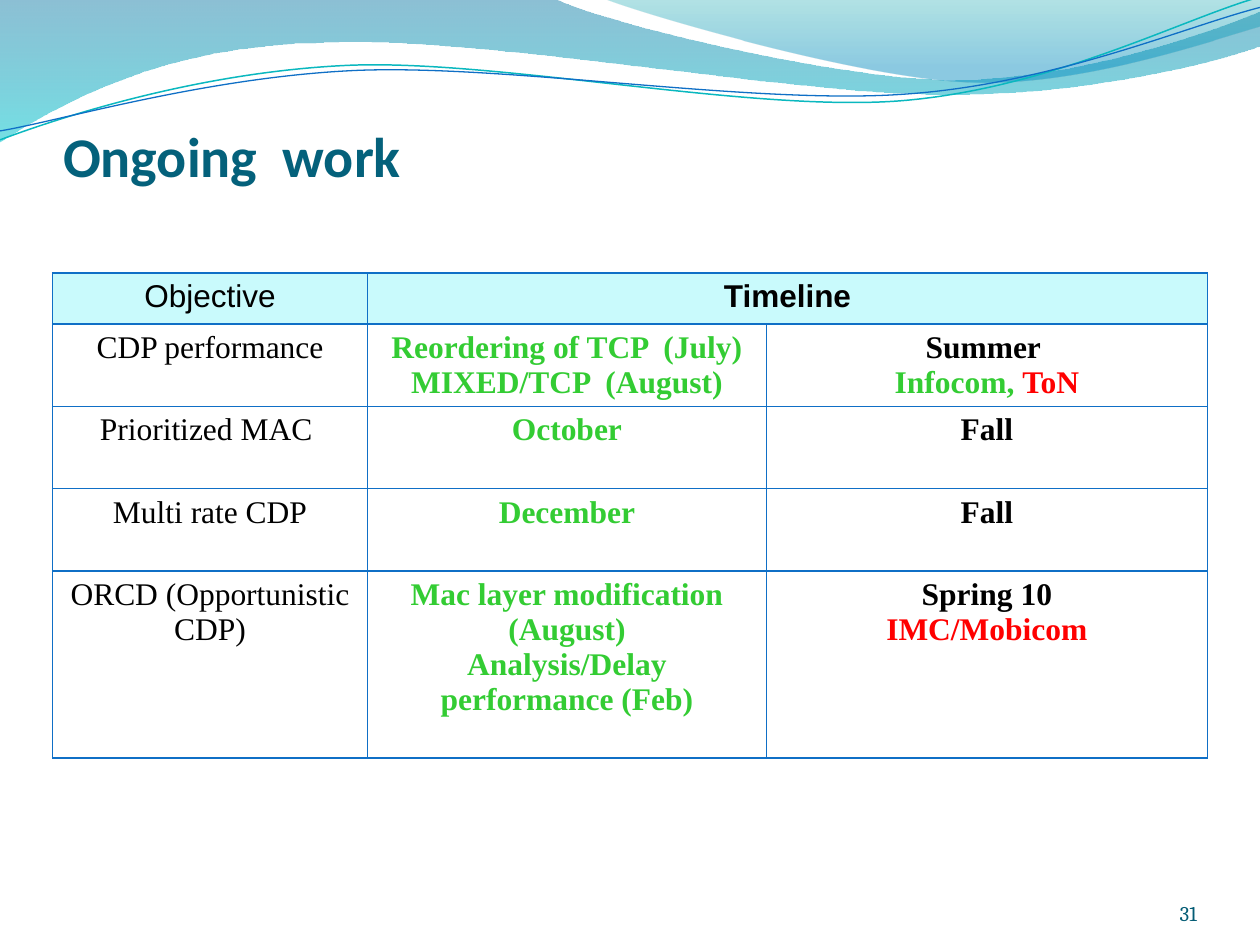
from lxml.etree import SubElement
from pptx import Presentation
from pptx.dml.color import RGBColor
from pptx.enum.text import MSO_ANCHOR, PP_ALIGN
from pptx.oxml.ns import qn
from pptx.util import Cm, Pt

BLUE = RGBColor(0x0F, 0x6F, 0xC6)
TEAL = RGBColor(0x0A, 0xB8, 0xBF)
DEEP_BLUE = RGBColor(0x00, 0x74, 0xA1)
AQUA = RGBColor(0x00, 0xC6, 0xCF)
SEA = RGBColor(0x00, 0xA1, 0xA9)
SKY = RGBColor(0x00, 0x8B, 0xBF)
TITLE_COLOR = RGBColor(0x04, 0x61, 0x7B)
NUMBER_COLOR = RGBColor(0x04, 0x5C, 0x75)
HEADER_FILL = RGBColor(0xC9, 0xFA, 0xFC)
BLACK = RGBColor(0, 0, 0)
GREEN = RGBColor(0x33, 0xCC, 0x33)
RED = RGBColor(0xFF, 0, 0)

BANDS = [
    ([(0, -0.03), (11.18, -0.03),
      (12.09, 0.43, 16.87, 1.6, 19.25, 1.6),
      (21.67, 1.6, 24.33, 0.66, 25.4, 0.23), (25.43, 0.91),
      (24.97, 1.12, 22.1, 1.93, 18.95, 1.9),
      (15.8, 1.9, 9.7, 0.71, 6.53, 0.86),
      (3.28, 0.89, 1.17, 2.11, -0.03, 2.87)],
     [(0, DEEP_BLUE, 45), (1, AQUA, 55)]),
    ([(12.17, -0.03),
      (12.93, 0.28, 17.32, 1.57, 19.53, 1.65),
      (21.74, 1.75, 24.41, 0.81, 25.4, 0.53), (25.4, 0)],
     [(0, SEA, 30), (0.8, SKY, 45)]),
]
STRAND_ROTATION = 357.3
STRANDS = [
    ([(-0.05, 2.22),
      (1.19, 1.82, 4.02, 1.04, 7.05, 1.05),
      (10.05, 1.07, 15.02, 2.37, 18.08, 2.29),
      (21.13, 2.2, 23.87, 0.91, 25.41, 0.55)], TEAL, 0.85),
    ([(-0.04, 2.04),
      (1.16, 1.9, 4.18, 1.15, 7.2, 1.16),
      (10.25, 1.18, 15.13, 2.23, 18.18, 2.16),
      (21.21, 2.1, 23.93, 1.06, 25.45, 0.75)], BLUE, 0.75),
]

COL_WIDTHS = [6.35, 8.04, 8.89]
ROW_HEIGHTS = [1.03, 1.66, 1.66, 1.66, 3.77]
HEADERS = ["Objective", "Timeline"]
ROWS = [
    ("CDP performance",
     [[("Reordering of TCP  (July)", GREEN)], [("MIXED/TCP  (August)", GREEN)]],
     [[("Summer ", BLACK)], [("Infocom, ", GREEN), ("ToN", RED)]]),
    ("Prioritized MAC ", [[("October", GREEN)]], [[("Fall", BLACK)]]),
    ("Multi rate CDP", [[("December", GREEN)]], [[("Fall", BLACK)]]),
    ("ORCD (Opportunistic CDP)",
     [[("Mac layer modification (August)", GREEN)],
      [("Analysis/Delay performance (Feb)", GREEN)]],
     [[("Spring 10", BLACK)], [("IMC/Mobicom", RED)]]),
]


def set_attrs(obj, **values):
    for name, value in values.items():
        setattr(obj, name, value)


def write_lines(tf, lines, font, size, bold=False, align=PP_ALIGN.CENTER):
    for i, line in enumerate(lines):
        p = tf.add_paragraph() if i else tf.paragraphs[0]
        p.alignment = align
        for text, color in line:
            r = p.add_run()
            r.text = text
            set_attrs(r.font, name=font, size=Pt(size), bold=bold)
            r.font.color.rgb = color


def add_outline(s, segments, close):
    anchors = [(Cm(seg[-2]), Cm(seg[-1])) for seg in segments]
    builder = s.shapes.build_freeform(*anchors[0])
    builder.add_line_segments(anchors[1:], close=close)
    sp = builder.convert_to_shape()
    sp.shadow.inherit = False
    for line, seg in zip(list(sp.element.iter(qn("a:lnTo"))), segments[1:]):
        if len(seg) == 6:
            line.tag = qn("a:cubicBezTo")
            line.remove(line[0])
            for x, y in zip(seg[::2], seg[1::2]):
                SubElement(line, qn("a:pt"), x=str(Cm(x) - sp.left), y=str(Cm(y) - sp.top))
    return sp


def add_band(s, segments, stops):
    sp = add_outline(s, segments, True)
    sp.line.fill.background()
    sp.fill.gradient()
    sp.fill.gradient_angle = 270
    for stop, (position, color, _) in zip(sp.fill.gradient_stops, stops):
        stop.position = position
        stop.color.rgb = color
    for clr, (_, _, opacity) in zip(sp.element.spPr.iter(qn("a:srgbClr")), stops):
        SubElement(clr, qn("a:alpha"), val=str(opacity * 1000))


def add_strand(s, segments, color, width):
    sp = add_outline(s, segments, False)
    sp.rotation = STRAND_ROTATION
    sp.fill.background()
    sp.line.color.rgb = color
    sp.line.width = Pt(width)


def add_title(s, text):
    sp = s.shapes.title
    set_attrs(sp, left=Cm(1.27), top=Cm(0.62), width=Cm(22.86), height=Cm(3.18))
    set_attrs(sp.text_frame, vertical_anchor=MSO_ANCHOR.BOTTOM, margin_left=0,
              margin_top=Cm(0.13), margin_right=0, margin_bottom=0)
    write_lines(sp.text_frame, [[(text, TITLE_COLOR)]], "Calibri", 32, True, PP_ALIGN.LEFT)


def add_page_number(s, text):
    tf = s.shapes.add_textbox(Cm(18.21), Cm(17.35), Cm(5.92), Cm(1.32)).text_frame
    set_attrs(tf, word_wrap=True, vertical_anchor=MSO_ANCHOR.BOTTOM, margin_left=0,
              margin_top=0, margin_right=0, margin_bottom=0)
    write_lines(tf, [[(text, NUMBER_COLOR)]], "Cambria", 12, align=PP_ALIGN.RIGHT)


def format_cell(cell, fill=None):
    cell.margin_bottom = 0
    tc_pr = cell._tc.get_or_add_tcPr()
    for side in ("a:lnL", "a:lnR", "a:lnT", "a:lnB"):
        ln = SubElement(tc_pr, qn(side), w=str(Pt(1)))
        SubElement(SubElement(ln, qn("a:solidFill")), qn("a:srgbClr"), val=str(BLUE))
    if fill is None:
        cell.fill.background()
    else:
        cell.fill.solid()
        cell.fill.fore_color.rgb = fill


def add_timeline_table(s):
    table = s.shapes.add_table(
        len(ROW_HEIGHTS), len(COL_WIDTHS), Cm(1.06), Cm(5.5),
        Cm(sum(COL_WIDTHS)), Cm(sum(ROW_HEIGHTS))).table
    set_attrs(table, first_row=False, horz_banding=False)
    for col, width in zip(table.columns, COL_WIDTHS):
        col.width = Cm(width)
    for i, (row, height) in enumerate(zip(table.rows, ROW_HEIGHTS)):
        row.height = Cm(height)
        for cell in row.cells:
            format_cell(cell, None if i else HEADER_FILL)
    table.cell(0, 1).merge(table.cell(0, 2))
    for c, text in enumerate(HEADERS):
        write_lines(table.cell(0, c).text_frame, [[(text, BLACK)]], "Arial", 18, c > 0)
    for i, (objective, *plans) in enumerate(ROWS, 1):
        for c, lines in enumerate([[[(objective, BLACK)]], *plans]):
            write_lines(table.cell(i, c).text_frame, lines, "Times New Roman", 18, c > 0)


def main():
    prs = Presentation()
    set_attrs(prs, slide_width=Cm(25.4), slide_height=Cm(19.05))
    s = prs.slides.add_slide(prs.slide_layouts[5])
    for segments, stops in BANDS:
        add_band(s, segments, stops)
    for segments, color, width in STRANDS:
        add_strand(s, segments, color, width)
    add_title(s, "Ongoing  work")
    add_page_number(s, "31")
    add_timeline_table(s)
    prs.save("out.pptx")


if __name__ == "__main__":
    main()
